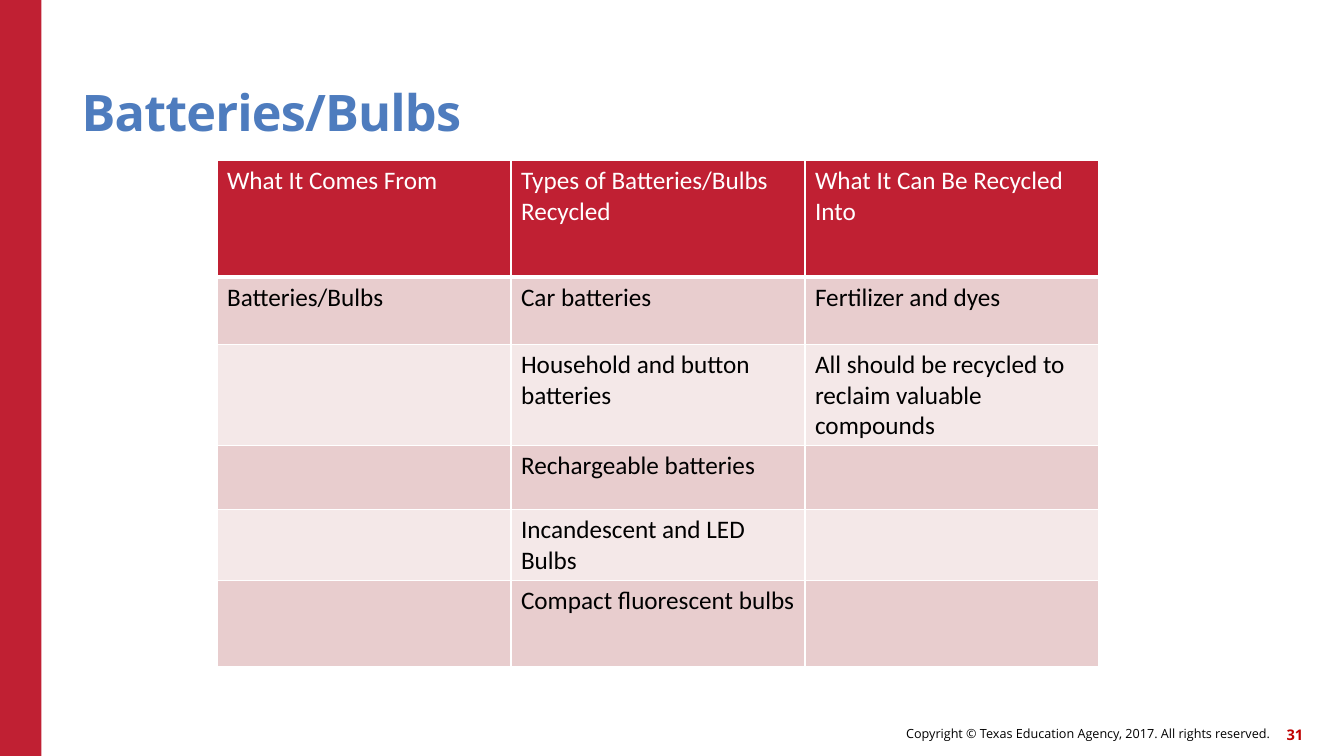
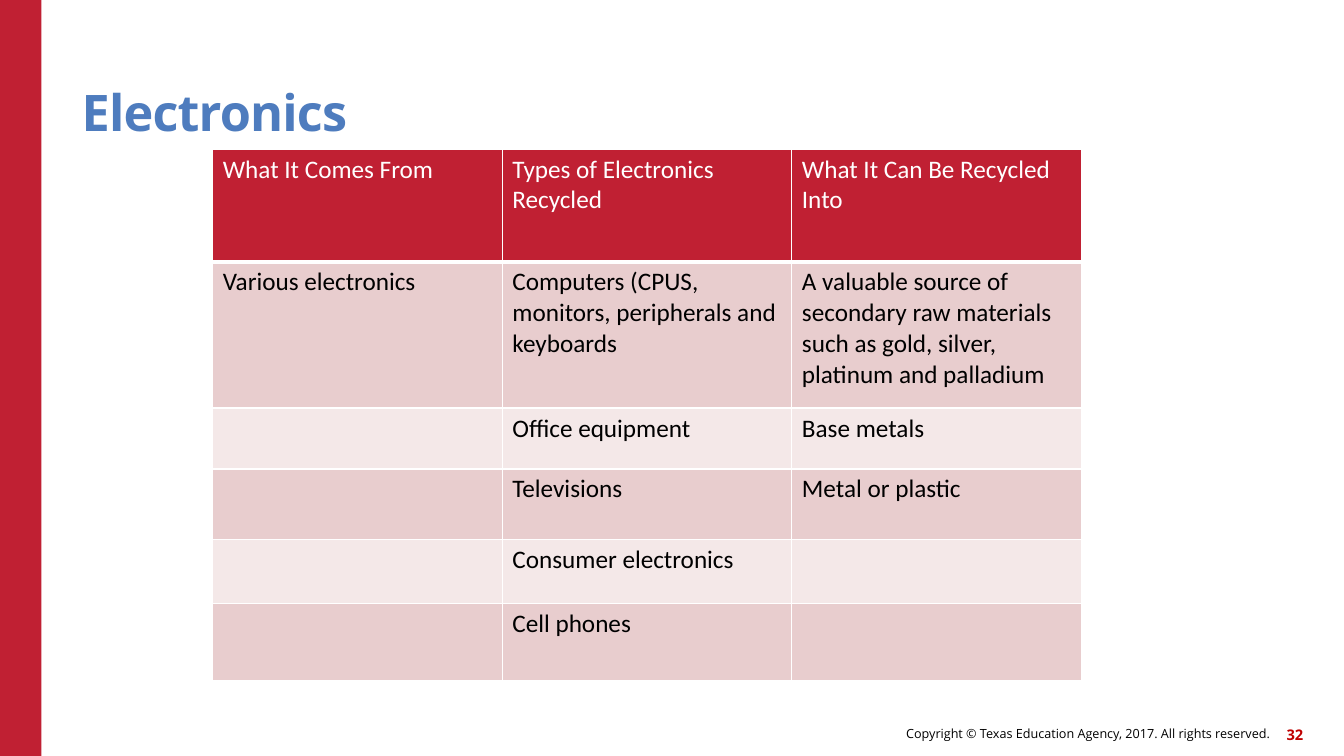
from dataclasses import dataclass

from lxml import etree
from pptx import Presentation
from pptx import util as u
from pptx.dml import color
from pptx.enum import shapes, text
from pptx.oxml import ns


@dataclass(frozen=True)
class Theme:
    red: str = "C02033"
    blue: str = "4E7CBE"
    mark: str = "C00000"
    white: str = "FFFFFF"
    black: str = "000000"
    bands: tuple = ("E8CDCE", "F4E8E8")
    head: str = "Open Sans"
    body: str = "Calibri"
    title: float = 36
    cell: float = 18
    note: float = 9
    page: float = 10.5


def rgb(code):
    return color.RGBColor.from_string(code)


def assign(item, values):
    for name, value in values.items():
        setattr(item, name, value)


class Deck:
    def __init__(self, theme):
        self.theme = theme
        self.file = Presentation()
        assign(self.file, {"slide_width": u.Pt(960), "slide_height": u.Pt(540)})
        self.slide = None

    def start(self, title, number):
        t = self.theme
        self.slide = self.file.slides.add_slide(self.file.slide_layouts[6])
        self.bar(0, 0, 29.5, 540, t.red)
        right = {"alignment": text.PP_ALIGN.RIGHT}
        self.label("Copyright © Texas Education Agency, 2017. All rights reserved.",
                   (442, 512.5, 465, 23), t.note, t.black, right)
        self.label(str(number), (900.7, 513.3, 30.2, 23), t.page, t.mark, right, bold=True)
        run = self.label(title, (58.4, 32.4, 792, 69), t.title, t.blue,
                         {"line_spacing": 0.9}, text.MSO_ANCHOR.BOTTOM, True)
        run.font._element.set("spc", "-60")

    def bar(self, left, top, width, height, fill):
        box = self.slide.shapes.add_shape(
            shapes.MSO_SHAPE.RECTANGLE, *map(u.Pt, (left, top, width, height)))
        box.shadow.inherit = False
        box.fill.solid()
        box.fill.fore_color.rgb = rgb(fill)
        box.line.fill.background()

    def style(self, font, name, size, code, bold=False):
        assign(font, {"name": name, "size": u.Pt(size), "bold": bold})
        font.color.rgb = rgb(code)

    def label(self, words, place, size, code, layout,
              anchor=text.MSO_ANCHOR.MIDDLE, bold=False):
        frame = self.slide.shapes.add_textbox(*map(u.Pt, place)).text_frame
        sides = ("left", "top", "right", "bottom")
        assign(frame, {"word_wrap": True, "vertical_anchor": anchor,
                       **{f"margin_{side}": 0 for side in sides}})
        para = frame.paragraphs[0]
        assign(para, layout)
        run = para.add_run()
        run.text = words
        self.style(run.font, self.theme.head, size, code, bold)
        return run

    def border(self, cell, widths):
        props = cell._tc.get_or_add_tcPr()
        for side, width in zip("LRTB", widths):
            line = etree.SubElement(props, ns.qn(f"a:ln{side}"), w=str(u.Pt(width)))
            fill = etree.SubElement(line, ns.qn("a:solidFill"))
            etree.SubElement(fill, ns.qn("a:srgbClr"), val=self.theme.white)

    def table(self, left, top, width, heights, rows):
        t = self.theme
        count = len(rows[0])
        grid = self.slide.shapes.add_table(
            len(rows), count, *map(u.Pt, (left, top, width, sum(heights)))).table
        for col in grid.columns:
            col.width = u.Pt(width / count)
        for i, (height, row) in enumerate(zip(heights, rows)):
            grid.rows[i].height = u.Pt(height)
            fill, ink = (t.bands[(i - 1) % 2], t.black) if i else (t.red, t.white)
            for j, words in enumerate(row):
                cell = grid.cell(i, j)
                self.border(cell, (1, 1, 3 if i == 1 else 1, 1 if i else 3))
                cell.fill.solid()
                cell.fill.fore_color.rgb = rgb(fill)
                cell.text = words
                para = cell.text_frame.paragraphs[0]
                for part in (para, *para.runs):
                    self.style(part.font, t.body, t.cell, ink)


def main():
    deck = Deck(Theme())
    deck.start("Batteries/Bulbs", 31)
    deck.table(155, 114.5, 630, (83.5, 48, 48, 46, 48, 62), [
        ("What It Comes From", "Types of Batteries/Bulbs Recycled",
         "What It Can Be Recycled Into"),
        ("Batteries/Bulbs", "Car batteries", "Fertilizer and dyes"),
        ("", "Household and button batteries",
         "All should be recycled to reclaim valuable compounds"),
        ("", "Rechargeable batteries", ""),
        ("", "Incandescent and LED Bulbs", ""),
        ("", "Compact fluorescent bulbs", ""),
    ])
    deck.start("Electronics", 32)
    deck.table(152, 106.5, 620.5, (80.5, 104.5, 43.5, 50.5, 45.5, 55.5), [
        ("What It Comes From", "Types of Electronics Recycled",
         "What It Can Be Recycled Into"),
        ("Various electronics",
         "Computers (CPUS, monitors, peripherals and keyboards",
         "A valuable source of secondary raw materials such as gold, silver, "
         "platinum and palladium"),
        ("", "Office equipment", "Base metals"),
        ("", "Televisions", "Metal or plastic"),
        ("", "Consumer electronics", ""),
        ("", "Cell phones", ""),
    ])
    deck.file.save("out.pptx")


if __name__ == "__main__":
    main()
